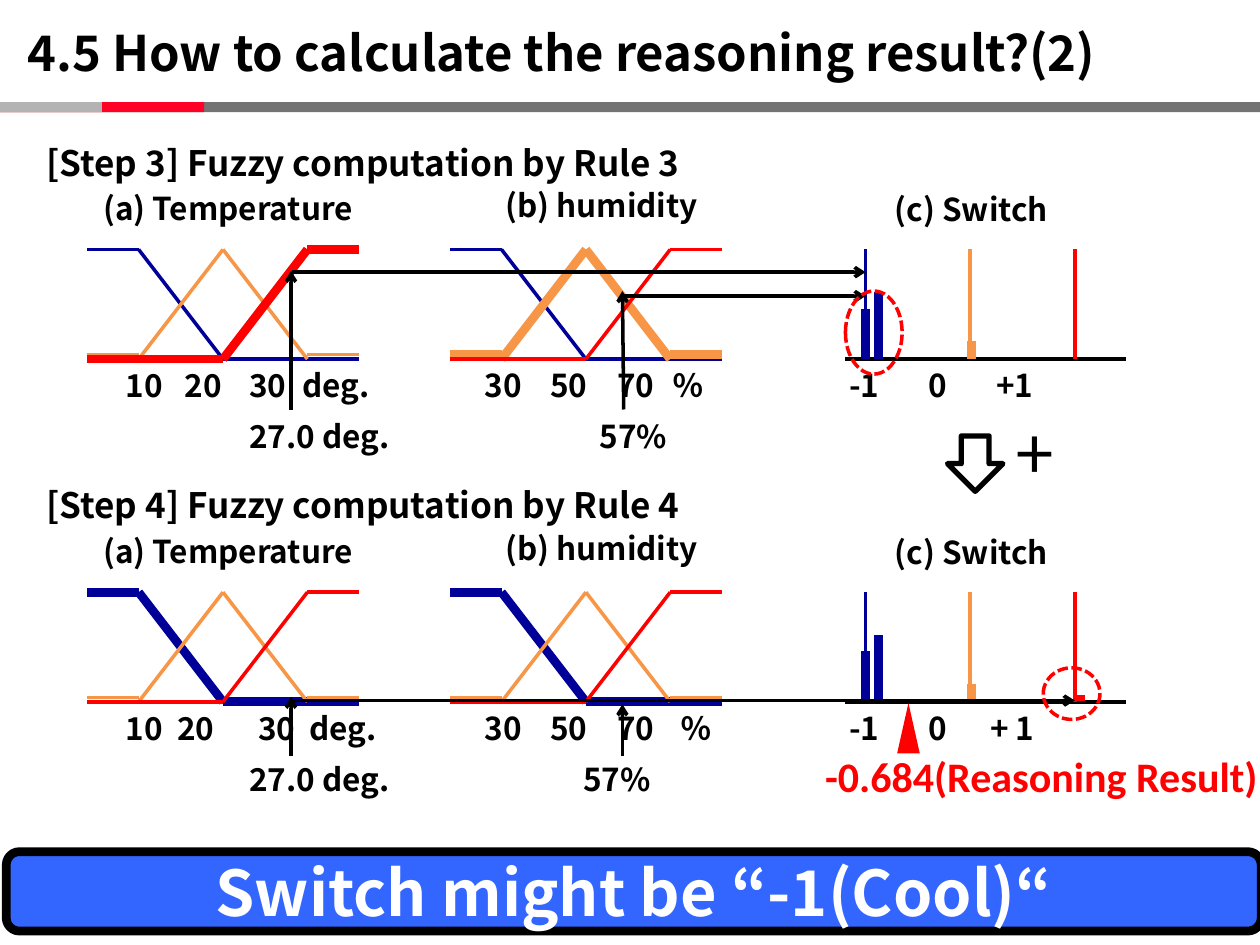
from dataclasses import dataclass

from lxml import etree
from pptx import Presentation
from pptx.dml.color import RGBColor
from pptx.enum.dml import MSO_LINE
from pptx.enum.shapes import MSO_CONNECTOR, MSO_SHAPE
from pptx.enum.text import MSO_ANCHOR, MSO_AUTO_SIZE, PP_ALIGN
from pptx.oxml.ns import qn
from pptx.util import Inches, Pt

STRAIGHT = MSO_CONNECTOR.STRAIGHT
LEFT, CENTER = PP_ALIGN.LEFT, PP_ALIGN.CENTER
MIDDLE = MSO_ANCHOR.MIDDLE
GROW = MSO_AUTO_SIZE.SHAPE_TO_FIT_TEXT
SHORT_DASH = MSO_LINE.SQUARE_DOT
RECTANGLE, ROUNDED = MSO_SHAPE.RECTANGLE, MSO_SHAPE.ROUNDED_RECTANGLE
OVAL, TRIANGLE = MSO_SHAPE.OVAL, MSO_SHAPE.ISOSCELES_TRIANGLE
DOWN_ARROW = MSO_SHAPE.DOWN_ARROW


@dataclass(frozen=True)
class Theme:
    font: str = "Noto Sans CJK JP"
    result_font: str = "Calibri"
    black: str = "000000"
    white: str = "FFFFFF"
    low: str = "000099"
    mid: str = "F79646"
    high: str = "FF0000"
    banner: str = "3366FF"
    rule: tuple = ("737373", "FF0026", "B3B3B3")
    label: int = 18
    heading: int = 20
    result: int = 24
    title: int = 28
    conclusion: int = 36
    plus: int = 40
    thin: int = 2
    outline: int = 3
    thick: int = 5


@dataclass(frozen=True)
class Box:
    left: float
    top: float
    width: float
    height: float

    def emu(self):
        return [Inches(v) for v in (self.left, self.top, self.width, self.height)]


@dataclass(frozen=True)
class Step:
    heading: str
    top: float
    bold_curves: tuple
    scales: tuple
    scale_stops: tuple
    humidity_reading: float
    arrows: tuple


THEME = Theme()
SLIDE_WIDTH, SLIDE_HEIGHT = 10, 7.5
PLOT_TOP, PLOT_HEIGHT, PLOT_WIDTH = 0.91, 0.87, 2.16
TEMPERATURE_LEFT, HUMIDITY_LEFT, SWITCH_LEFT = 0.69, 3.57, 6.71
SWITCH_WIDTH, FIRST_SPIKE, SPIKE_GAP = 2.23, 0.16, 0.83

# Segments as shares of the plot: (x, height) to (x, height)
SLOPES = (
    ("low", (0.5, 0), (1, 0)), ("low", (0.19, 1), (0.5, 0)),
    ("mid", (0.19, 0), (0.5, 1)), ("mid", (0.5, 1), (0.81, 0)),
    ("high", (0.5, 0), (0.81, 1)), ("high", (0.81, 1), (1, 1)),
    ("low", (0, 1), (0.19, 1)), ("mid", (0, 0.04), (0.19, 0.04)),
    ("mid", (0.81, 0.04), (1, 0.04)), ("high", (0, 0), (0.5, 0)),
)
# Spike number, shift from the spike, height
BARS = ((1, 0.01, 0.14), (0, 0, 0.4), (0, 0.1, 0.53))
CURVES = ("low", "mid", "high")

STEPS = (
    Step("[Step 3] Fuzzy computation by Rule 3", 1.07, ("high", "mid"),
         ("10\t20\t30\tdeg.", "30\t50\t70\t％", "-1\t0\t+1"),
         ((0.47, 0.98, 1.4), (0.52, 1.05, 1.49), (0.63, 1.17)), 4.66,
         (((2.31, 2.18), (2.31, 1.08)), ((4.95, 2.18), (4.94, 1.24)),
          ((2.32, 1.09), (6.87, 1.09)), ((4.93, 1.28), (6.87, 1.28)))),
    Step("[Step 4] Fuzzy computation by Rule 4", 3.79, ("low", "low"),
         ("10\t20\t30\tdeg.", "30\t50\t70\t％", "-1\t0\t+ 1"),
         ((0.41, 1.05, 1.46), (0.52, 1.05, 1.55), (0.63, 1.12)), 4.53,
         (((2.31, 2.21), (2.31, 1.74)), ((4.94, 2.21), (4.94, 1.8)),
          ((2.32, 1.77), (8.53, 1.77)))),
)


def color(code):
    return RGBColor.from_string(code)


def style(para, size, code=THEME.black, bold=True, align=LEFT, font=THEME.font):
    para.alignment = align
    para.font.name, para.font.size, para.font.bold = font, Pt(size), bold
    para.font.color.rgb = color(code)
    for span in para.runs:
        etree.SubElement(span._r.get_or_add_rPr(), qn("a:ea")).set("typeface", font)


def add_text(page, box, text, size=THEME.label, stops=(), **look):
    shape = page.shapes.add_textbox(*box.emu())
    frame = shape.text_frame
    frame.word_wrap = bool(stops)
    frame.auto_size = GROW
    para = frame.paragraphs[0]
    para.add_run().text = text
    style(para, size, **look)
    if stops:
        tabs = etree.Element(qn("a:tabLst"))
        for stop in stops:
            etree.SubElement(tabs, qn("a:tab"), pos=str(Inches(stop)), algn="l")
        para._p.get_or_add_pPr().insert_element_before(tabs, "a:defRPr", "a:extLst")


def add_line(page, start, end, code=THEME.black, width=THEME.thin, arrow=False):
    line = page.shapes.add_connector(STRAIGHT, *(Inches(v) for v in (*start, *end)))
    line.line.color.rgb = color(code)
    line.line.width = Pt(width)
    if arrow:
        etree.SubElement(line.line._get_or_add_ln(), qn("a:tailEnd"), type="arrow")
    etree.SubElement(line._element.spPr, qn("a:effectLst"))


def add_preset(page, kind, box, fill=None, outline=None, width=THEME.thin):
    shape = page.shapes.add_shape(kind, *box.emu())
    shape.shadow.inherit = False
    if fill:
        shape.fill.solid()
        shape.fill.fore_color.rgb = color(fill)
    else:
        shape.fill.background()
    if outline:
        shape.line.color.rgb = color(outline)
        shape.line.width = Pt(width)
    else:
        shape.line.fill.background()
    return shape


def add_header(page, box):
    title = page.shapes.title
    title.left, title.top, title.width, title.height = Box(0.12, 0.13, 9.64, 0.57).emu()
    frame = title.text_frame
    frame.word_wrap = False
    frame.vertical_anchor = MIDDLE
    para = frame.paragraphs[0]
    para.add_run().text = "4.5 How to calculate the reasoning result?(2)"
    style(para, THEME.title)
    for code, share in zip(THEME.rule, (1, 0.162, 0.081)):
        add_preset(page, RECTANGLE,
                   Box(box.left, box.top, box.width * share, box.height), code)


def add_membership_plot(page, box, bold_curve):
    def place(point):
        return (box.left + point[0] * box.width,
                box.top + (1 - point[1]) * box.height)

    for curve, start, end in SLOPES:
        width = THEME.thick if curve == bold_curve else THEME.thin
        add_line(page, place(start), place(end), getattr(THEME, curve), width)


def add_switch_plot(page, box):
    base = box.top + box.height
    add_line(page, (box.left, base), (box.left + box.width, base))
    spikes = [box.left + FIRST_SPIKE + i * SPIKE_GAP for i in range(len(CURVES))]
    for x, curve in zip(spikes, CURVES):
        add_line(page, (x, box.top), (x, base), getattr(THEME, curve))
    for spike, shift, height in BARS:
        x = spikes[spike] + shift
        add_line(page, (x, base - height), (x, base),
                 getattr(THEME, CURVES[spike]), THEME.thick)


def add_step(page, step):
    top = step.top
    add_text(page, Box(0.27, top, 5.83, 0.44), step.heading, THEME.heading)
    captions = (("(a) Temperature", 0.61, 0.38, 2.4),
                ("(b) humidity", 3.83, 0.36, 1.89), ("(c) Switch", 6.93, 0.39, 1.56))
    for text, left, drop, width in captions:
        add_text(page, Box(left, top + drop, width, 0.4), text, align=CENTER)
    for text, stops, left in zip(step.scales, step.scale_stops, (0.9, 3.75, 6.64)):
        add_text(page, Box(left, top + 1.79, 2.6, 0.4), text, stops=stops)
    for text, left, width in (("27.0 deg.", 1.88, 1.46),
                              ("57%", step.humidity_reading, 0.83)):
        add_text(page, Box(left, top + 2.19, width, 0.4), text)
    for left, bold_curve in zip((TEMPERATURE_LEFT, HUMIDITY_LEFT), step.bold_curves):
        add_membership_plot(page, Box(left, top + PLOT_TOP, PLOT_WIDTH, PLOT_HEIGHT),
                            bold_curve)
    add_switch_plot(page, Box(SWITCH_LEFT, top + PLOT_TOP, SWITCH_WIDTH, PLOT_HEIGHT))
    for (x1, y1), (x2, y2) in step.arrows:
        add_line(page, (x1, top + y1), (x2, top + y2), arrow=True)


def add_result(page):
    add_preset(page, DOWN_ARROW, Box(7.52, 3.46, 0.44, 0.44),
               outline=THEME.black, width=THEME.outline)
    add_text(page, Box(7.96, 3.21, 0.65, 0.77), "+", THEME.plus, bold=False)
    add_line(page, (8.58, 5.52), (8.58, 5.56), THEME.high, THEME.thick)
    add_preset(page, TRIANGLE, Box(7.12, 5.58, 0.18, 0.4), THEME.high)
    add_text(page, Box(6.45, 5.91, 3.67, 0.5), "-0.684(Reasoning Result)",
             THEME.result, code=THEME.high, font=THEME.result_font)
    for ring in (Box(6.71, 2.31, 0.45, 0.66), Box(8.28, 5.3, 0.45, 0.41)):
        add_preset(page, OVAL, ring, outline=THEME.high).line.dash_style = SHORT_DASH


def add_conclusion(page, box):
    banner = add_preset(page, ROUNDED, box, THEME.banner, THEME.black, THEME.thick)
    banner.text_frame.vertical_anchor = MIDDLE
    para = banner.text_frame.paragraphs[0]
    para.add_run().text = "Switch might be “-1(Cool)“"
    style(para, THEME.conclusion, THEME.white, align=CENTER)


def main():
    deck = Presentation()
    deck.slide_width, deck.slide_height = Inches(SLIDE_WIDTH), Inches(SLIDE_HEIGHT)
    page = deck.slides.add_slide(deck.slide_layouts.get_by_name("Title Only"))
    add_header(page, Box(0, 0.81, SLIDE_WIDTH, 0.08))
    for step in STEPS:
        add_step(page, step)
    add_result(page)
    add_conclusion(page, Box(0.05, 6.76, 9.96, 0.63))
    deck.save("out.pptx")


if __name__ == "__main__":
    main()
